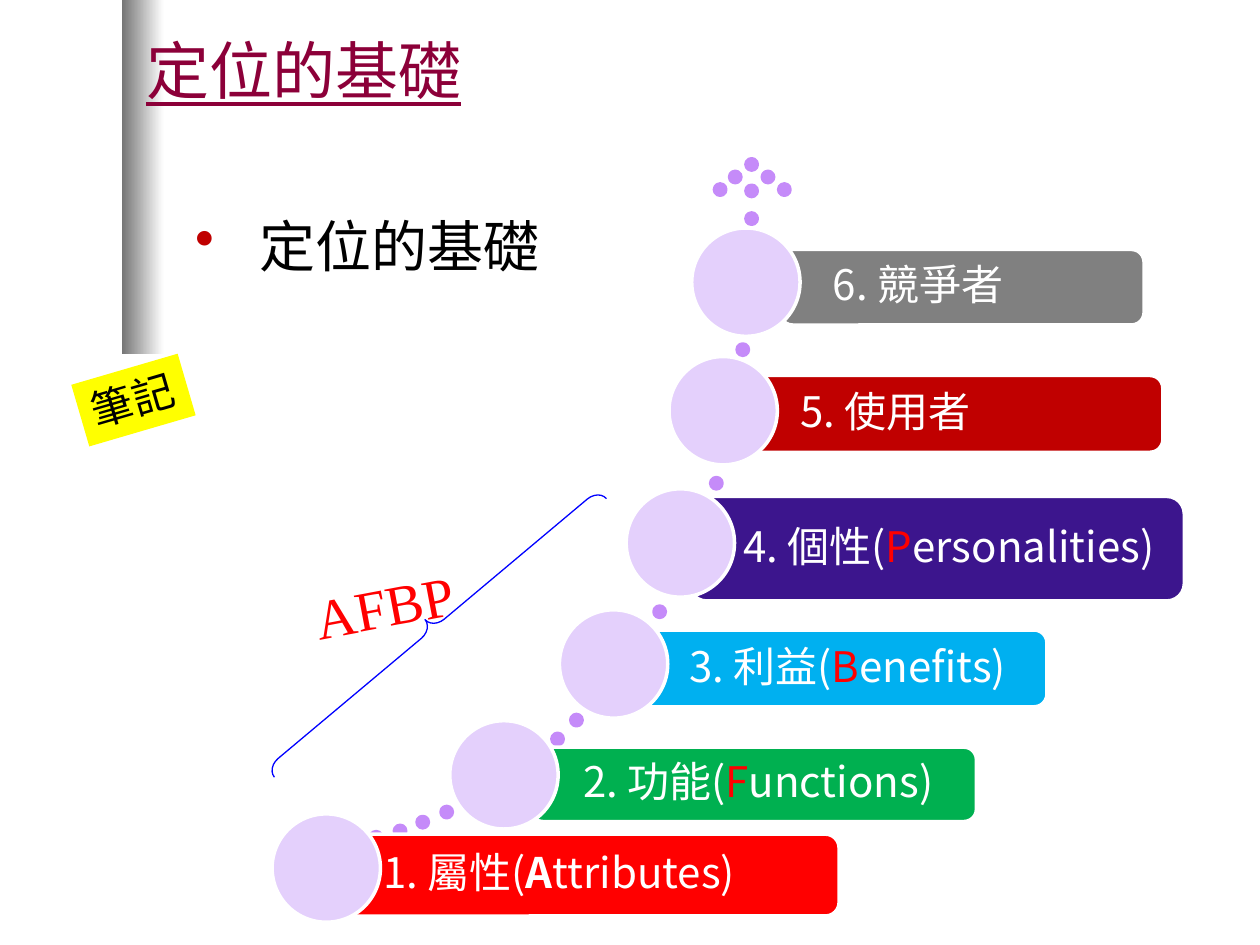
"""Build the positioning slide: six steps climbing along a dotted arrow."""
from lxml import etree
from pptx import Presentation
from pptx import util as u
from pptx.dml.color import RGBColor
from pptx.enum import shapes, text
from pptx.oxml.ns import qn

SANS = "Noto Sans CJK SC"
KIND = shapes.MSO_SHAPE


def tint(code):
    return RGBColor.from_string(code)


def write(shape, runs, size=24, face=SANS, color="000000", under=None, align="LEFT",
          anchor="TOP", wrap=True, fit="NONE", pads=(0.1, 0.05, 0.1, 0.05), lead=1.0, bullet=None):
    frame = shape.text_frame
    frame.word_wrap = wrap
    frame.auto_size = getattr(text.MSO_AUTO_SIZE, fit)
    frame.vertical_anchor = getattr(text.MSO_ANCHOR, anchor)
    for side, pad in zip(("left", "top", "right", "bottom"), pads):
        setattr(frame, "margin_" + side, u.Inches(pad))
    para = frame.paragraphs[0]
    para.alignment = getattr(text.PP_ALIGN, align)
    para.line_spacing = lead
    para.space_before = u.Pt(0)
    if bullet:
        props = para._p.get_or_add_pPr()
        props.set("marL", str(u.Inches(0.51)))
        props.set("indent", str(u.Inches(-0.51)))
        shade = etree.SubElement(props, qn("a:buClr"))
        etree.SubElement(shade, qn("a:srgbClr")).set("val", bullet)
        etree.SubElement(props, qn("a:buChar")).set("char", "•")
    for words, style in runs:
        run = para.add_run()
        run.text = words
        font = run.font
        font.size, font.name, font.underline = u.Pt(size), face, under
        font.bold = style.get("bold", False)
        font.color.rgb = tint(style.get("color", color))
        etree.SubElement(run._r.get_or_add_rPr(), qn("a:ea")).set("typeface", face)


deck = Presentation()
deck.slide_width, deck.slide_height = u.Inches(10), u.Inches(7.5)
slide = deck.slides.add_slide(deck.slide_layouts[5])
items = slide.shapes

title = items.title
title.left, title.top, title.width, title.height = map(u.Inches, (1.06, 0.21, 8.5, 0.68))
write(title, [("定位的基礎", {})], size=36, color="8C0039", under=True, anchor="MIDDLE")

strip = items.add_shape(KIND.RECTANGLE, *map(u.Inches, (0.97, 0, 0.33, 2.81)))
strip.shadow.inherit = False
strip.line.fill.background()
strip.fill.gradient()
strip.fill.gradient_angle = 0
for stop, code in zip(strip.fill.gradient_stops, ("767676", "FFFFFF")):
    stop.color.rgb = tint(code)
items._spTree.insert(2, strip._element)

point = items.add_textbox(*map(u.Inches, (1.45, 1.47, 4.18, 0.63)))
write(point, [("定位的基礎", {})], size=32, face="Noto Sans CJK TC", lead=1.3, bullet="C00000")

brace = items.add_shape(KIND.RIGHT_BRACE, *map(u.Inches, (3.34, 3.27, 0.19, 3.44)))
brace.rotation = 230
brace.adjustments[0] = 0.62
brace.shadow.inherit = False
brace.fill.background()
brace.line.color.rgb = tint("0000FF")
brace.line.width = u.Pt(0.75)

label = items.add_textbox(*map(u.Inches, (2.07, 4.49, 1.91, 0.38)))
label.rotation = 349.3
write(label, [("AFBP", {})], size=32, face="Times New Roman", color="FF0000",
      align="CENTER", wrap=False, fit="SHAPE_TO_FIT_TEXT")

note = items.add_shape(KIND.RECTANGLE, *map(u.Inches, (0.62, 2.92, 0.88, 0.51)))
note.rotation = 343.7
note.shadow.inherit = False
note.fill.solid()
note.fill.fore_color.rgb = tint("FFFF00")
note.line.fill.background()
write(note, [("筆記", {})], wrap=False, fit="SHAPE_TO_FIT_TEXT")

trail = [(3.5, 6.4), (3.31, 6.48), (3.13, 6.55), (2.94, 6.6), (4.53, 5.67), (4.38, 5.82),
         (5.19, 4.81), (5.64, 3.79), (5.85, 2.73), (5.67, 1.46), (5.79, 1.36), (5.92, 1.26),
         (6.05, 1.36), (6.18, 1.46), (5.92, 1.47), (5.92, 1.69)]
red = {"color": "FF0000"}
steps = [
    ((2.62, 6.62, 4.04, 0.65), "FF0000", (2.16, 6.46),
     [("1. 屬性(", {}), ("A", {"bold": True}), ("ttributes)", {})]),
    ((4.21, 5.93, 3.54, 0.59), "00B050", (3.57, 5.72),
     [("2. 功能(", {}), ("F", red), ("unctions)", {})]),
    ((5.05, 5, 3.26, 0.61), "00B0F0", (4.44, 4.84),
     [("3. 利益(", {}), ("B", red), ("enefits)", {})]),
    ((5.47, 3.94, 3.93, 0.83), "3C158D", (4.97, 3.88),
     [("4. 個性(", {}), ("P", red), ("ersonalities)", {})]),
    ((5.93, 2.98, 3.3, 0.61), "C00000", (5.31, 2.83), [("5. 使用者", {})]),
    ((6.19, 1.98, 2.89, 0.6), "808080", (5.49, 1.81), [("6. 競爭者", {})]),
]
parts = [(KIND.OVAL, (*spot, 0.09, 0.09), "C58BF9", "C58BF9", None) for spot in trail]
for bar, fill, disc, runs in steps:
    parts.append((KIND.ROUNDED_RECTANGLE, bar, fill, "FFFFFF", runs))
    parts.append((KIND.OVAL, (*disc, 0.86, 0.86), "E4D0FC", "FFFFFF", None))

for kind, box, fill, edge, runs in parts:
    part = items.add_shape(kind, *map(u.Inches, box))
    part.shadow.inherit = False
    part.fill.solid()
    part.fill.fore_color.rgb = tint(fill)
    part.line.color.rgb = tint(edge)
    part.line.width = u.Pt(2)
    if runs:
        write(part, runs, color="FFFFFF", anchor="MIDDLE", pads=(0.39, 0.1, 0.1, 0.1), lead=0.9)

deck.save("out.pptx")
